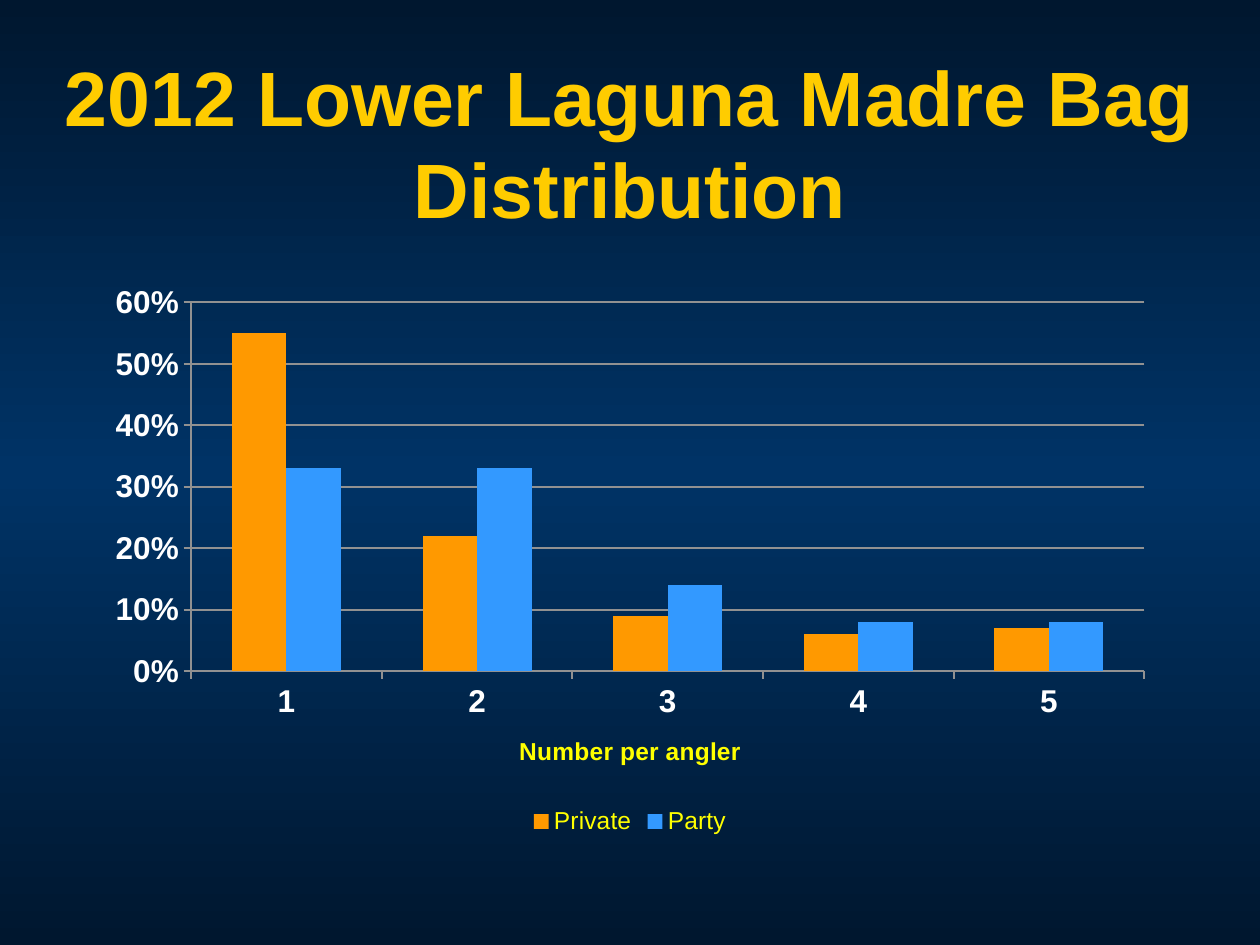
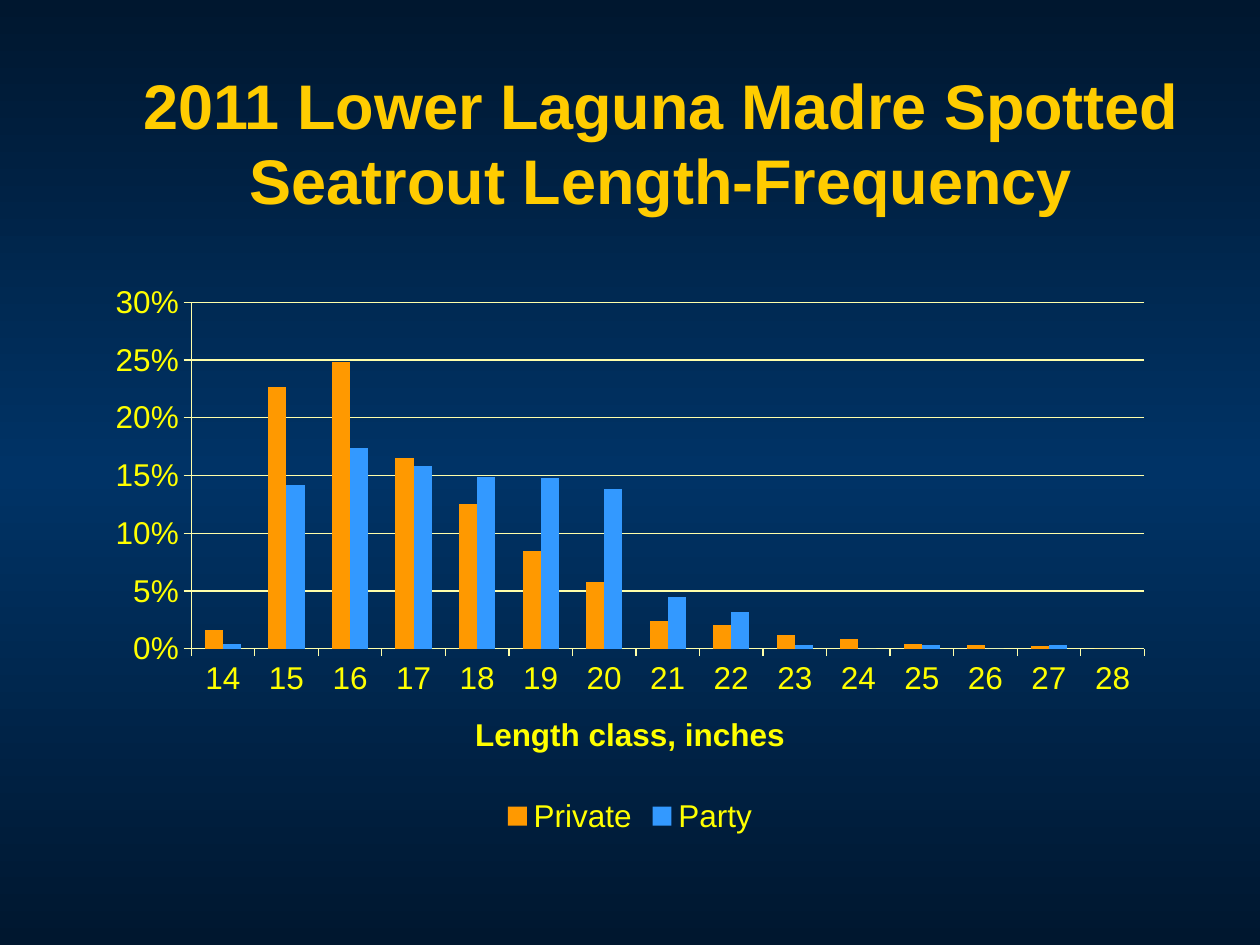
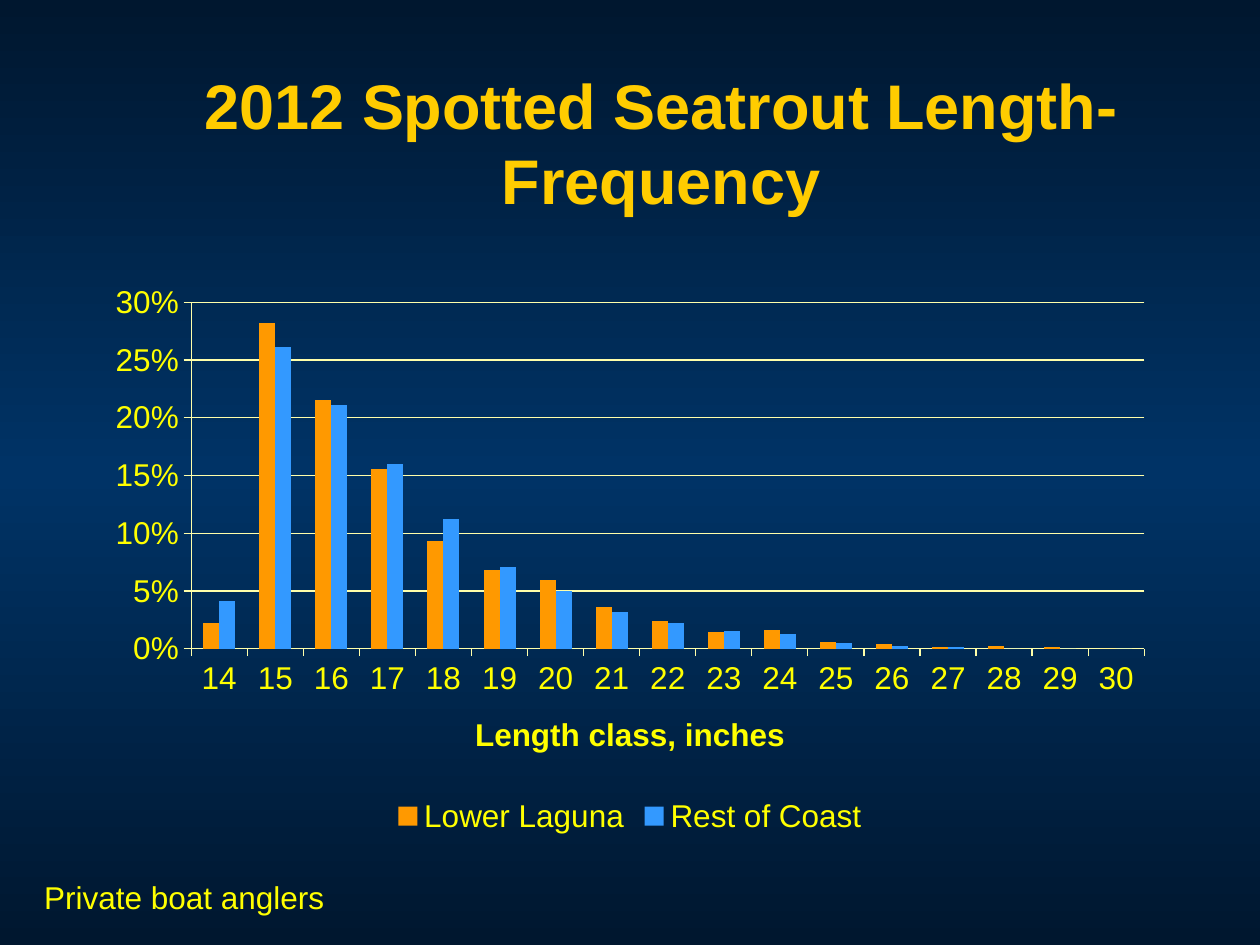
from copy import deepcopy

from pptx import Presentation
from pptx.chart.data import CategoryChartData
from pptx.dml.color import RGBColor
from pptx.enum.chart import XL_CHART_TYPE, XL_LEGEND_POSITION, XL_TICK_MARK
from pptx.enum.text import MSO_ANCHOR, MSO_AUTO_SIZE, PP_ALIGN
from pptx.oxml.ns import qn
from pptx.util import Cm, Pt

COLUMNS = XL_CHART_TYPE.COLUMN_CLUSTERED
BOTTOM = XL_LEGEND_POSITION.BOTTOM
OUTSIDE = XL_TICK_MARK.OUTSIDE
MIDDLE = MSO_ANCHOR.MIDDLE
NO_FIT = MSO_AUTO_SIZE.NONE
CENTER = PP_ALIGN.CENTER

FONT = "Arial"
NAVY, BLUE = "00172F", "003366"
GOLD, YELLOW, WHITE = "FFCC00", "FFFF00", "FFFFFF"
GRAY, CREAM = "919191", "FFFFAA"
SERIES_COLORS = ("FF9900", "3399FF")


def rgb(value):
    return RGBColor.from_string(value)


def set_font(font, size, color, bold=False):
    font.name = FONT
    font.size = Pt(size)
    font.bold = bold
    font.color.rgb = rgb(color)


def set_line(line, color, width):
    line.color.rgb = rgb(color)
    line.width = Pt(width)


def set_background(master):
    """Give every slide a vertical gradient that is lightest in the middle."""
    fill = master.background.fill
    fill.gradient()
    fill.gradient_angle = 90
    stop_list = master.element.find(".//" + qn("a:gsLst"))
    stop_list.append(deepcopy(stop_list[-1]))
    for stop, position, color in zip(fill.gradient_stops, (0, 0.5, 1), (NAVY, BLUE, NAVY)):
        stop.position = position
        stop.color.rgb = rgb(color)


def write(tf, text, size, color, bold=False, align=None):
    p = tf.paragraphs[0]
    p.alignment = align
    r = p.add_run()
    r.text = text
    set_font(r.font, size, color, bold)


def add_title_slide(prs, title, left=1.9, width=22.86, size=36):
    s = prs.slides.add_slide(prs.slide_layouts[5])
    sp = s.shapes.title
    sp.left, sp.top, sp.width, sp.height = Cm(left), Cm(1.27), Cm(width), Cm(3.18)
    tf = sp.text_frame
    tf.auto_size = NO_FIT
    tf.vertical_anchor = MIDDLE
    write(tf, title, size, GOLD, bold=True, align=CENTER)
    return s


def add_column_chart(s, categories, series, axis_title, top_value, step, note_size=18,
                     tick_color=YELLOW, tick_bold=False, line=(CREAM, 0.75)):
    """Add a two-series percentage chart; note_size is for axis title and legend."""
    data = CategoryChartData(number_format="0%")
    data.categories = categories
    for name, values in series.items():
        data.add_series(name, values)
    chart = s.shapes.add_chart(COLUMNS, Cm(1.9), Cm(5.51), Cm(21.6), Cm(11.43), data).chart
    chart.has_title = False
    set_font(chart.font, 18, YELLOW)

    plot = chart.plots[0]
    plot.gap_width = 150
    plot.overlap = 0
    plot.vary_by_categories = False
    for bars, color in zip(plot.series, SERIES_COLORS):
        bars.format.fill.solid()
        bars.format.fill.fore_color.rgb = rgb(color)

    for axis in (chart.category_axis, chart.value_axis):
        axis.major_tick_mark = OUTSIDE
        set_font(axis.tick_labels.font, 18, tick_color, tick_bold)
        set_line(axis.format.line, *line)
    write(chart.category_axis.axis_title.text_frame, axis_title, note_size, YELLOW, bold=True)

    values = chart.value_axis
    values.minimum_scale, values.maximum_scale, values.major_unit = 0, top_value, step
    values.tick_labels.number_format = "0%"
    values.tick_labels.number_format_is_linked = False
    values.has_major_gridlines = True
    set_line(values.major_gridlines.format.line, *line)

    chart.has_legend = True
    chart.legend.position = BOTTOM
    chart.legend.include_in_layout = False
    set_font(chart.legend.font, note_size, YELLOW)


def add_length_chart(s, last_inch, series):
    add_column_chart(s, range(14, last_inch + 1), series, "Length class, inches", 0.3, 0.05)


def add_note(s, text):
    tf = s.shapes.add_textbox(Cm(0.64), Cm(17.58), Cm(6.22), Cm(1.02)).text_frame
    tf.word_wrap = False
    write(tf, text, 18, YELLOW)


def main():
    prs = Presentation()
    prs.slide_width, prs.slide_height = Cm(25.4), Cm(19.05)
    set_background(prs.slide_master)

    s = add_title_slide(prs, "2012 Lower Laguna Madre Bag Distribution",
                        left=0, width=25.4, size=44)
    add_column_chart(s, range(1, 6), {
        "Private": (0.55, 0.22, 0.09, 0.06, 0.07),
        "Party": (0.33, 0.33, 0.14, 0.08, 0.08),
    }, "Number per angler", 0.6, 0.1, note_size=14,
        tick_color=WHITE, tick_bold=True, line=(GRAY, 1.25))

    s = add_title_slide(prs, "2011 Lower Laguna Madre Spotted Seatrout Length-Frequency")
    add_length_chart(s, 28, {
        "Private": (0.016, 0.227, 0.248, 0.165, 0.125, 0.085, 0.058, 0.024,
                    0.02, 0.012, 0.008, 0.004, 0.003, 0.002, 0),
        "Party": (0.004, 0.142, 0.174, 0.158, 0.149, 0.148, 0.138, 0.045,
                  0.032, 0.003, 0, 0.003, 0, 0.003, 0),
    })

    s = add_title_slide(prs, "2012 Spotted Seatrout Length-Frequency")
    add_length_chart(s, 30, {
        "Lower Laguna": (0.022, 0.282, 0.215, 0.156, 0.093, 0.068, 0.059, 0.036, 0.024,
                         0.014, 0.016, 0.006, 0.004, 0.001, 0.002, 0.001, 0),
        "Rest of Coast": (0.041, 0.261, 0.211, 0.16, 0.112, 0.071, 0.05, 0.032, 0.022,
                          0.015, 0.013, 0.005, 0.002, 0.001, 0, 0, 0),
    })
    add_note(s, "Private boat anglers")

    prs.save("out.pptx")


if __name__ == "__main__":
    main()
